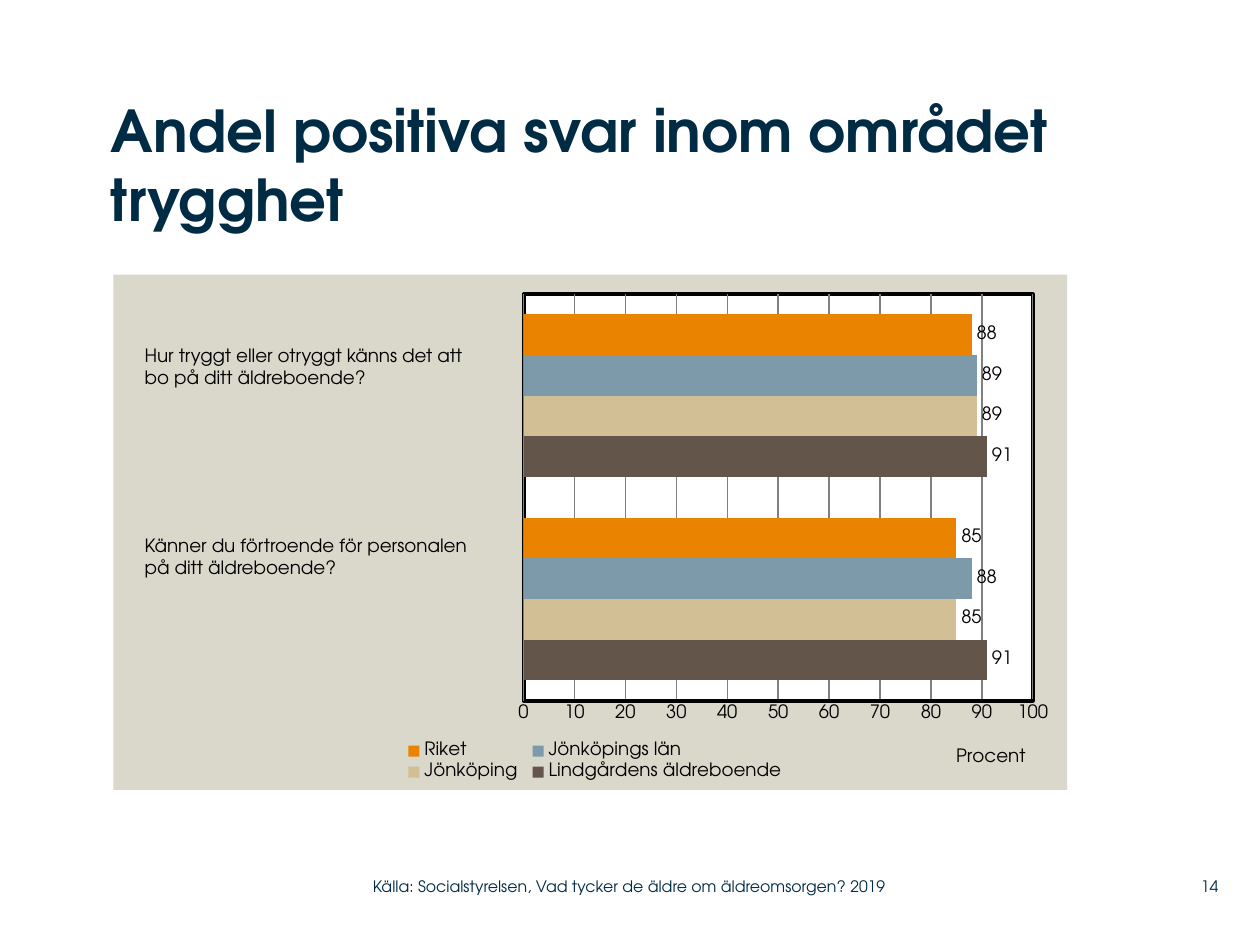
from dataclasses import dataclass

from lxml.etree import SubElement
from pptx import Presentation
from pptx.chart.data import CategoryChartData
from pptx.dml.color import RGBColor
from pptx.enum.chart import (XL_CHART_TYPE as ChartType, XL_LABEL_POSITION as LabelPosition,
                             XL_LEGEND_POSITION as LegendPosition, XL_TICK_MARK as TickMark)
from pptx.enum.text import MSO_ANCHOR as Anchor, PP_ALIGN as Align
from pptx.oxml import parse_xml
from pptx.oxml.ns import nsdecls, qn
from pptx.util import Inches, Pt


@dataclass(frozen=True)
class Theme:
    font: str = "TeX Gyre Adventor"
    navy: str = "002B45"
    black: str = "000000"
    white: str = "FFFFFF"
    panel: str = "DAD7CB"
    grid: str = "808080"
    title_size: float = 33
    body_size: float = 10.5
    footer_size: float = 9
    frame_width: float = 2.25


THEME = Theme()
COLUMNS, ROWS = 100, 75
WIDTH, HEIGHT = Inches(10), Inches(7.5)

# Name, colour, values (lower question first)
SERIES = [
    ("Lindgårdens äldreboende", "635549", (91, 91)),
    ("Jönköping", "D3BF96", (85, 89)),
    ("Jönköpings län", "7D9AAA", (88, 89)),
    ("Riket", "E98300", (85, 88)),
]


def place(column, row, columns, rows):
    """Turn grid units into left, top, width and height."""
    across, down = WIDTH / COLUMNS, HEIGHT / ROWS
    return (int(column * across), int(row * down), int(columns * across), int(rows * down))


def style_font(font, size, color, bold=False):
    font.name, font.size, font.bold = THEME.font, Pt(size), bold
    font.color.rgb = RGBColor.from_string(color)


def add_text(page, area, lines, size, color, bold=False, inset=0.0,
             align=Align.LEFT, anchor=Anchor.TOP):
    frame = page.shapes.add_textbox(*place(*area)).text_frame
    frame.word_wrap = True
    frame.vertical_anchor = anchor
    frame.margin_left = frame.margin_right = Inches(inset)
    frame.margin_top = frame.margin_bottom = Inches(inset / 2)
    frame.text = "\n".join(lines)
    for para in frame.paragraphs:
        para.alignment = align
        style_font(para.font, size, color, bold)


def set_layout(element, index, **shares):
    """Fix a chart part's position, in shares of the chart's size."""
    for old in element.findall(qn("c:layout")):
        element.remove(old)
    layout = parse_xml(f"<c:layout {nsdecls('c')}/>")
    element.insert(index, layout)
    manual = SubElement(layout, qn("c:manualLayout"))
    if element.tag == qn("c:plotArea"):
        SubElement(manual, qn("c:layoutTarget"), val="inner")
    for mode in ("xMode", "yMode"):
        SubElement(manual, qn(f"c:{mode}"), val="edge")
    for name, share in shares.items():
        SubElement(manual, qn(f"c:{name}"), val=str(share))


def area_format(fill, line=None):
    outline = "<a:ln><a:noFill/></a:ln>"
    if line:
        outline = (f'<a:ln w="{Pt(THEME.frame_width)}"><a:solidFill>'
                   f'<a:srgbClr val="{line}"/></a:solidFill></a:ln>')
    return parse_xml(f'<c:spPr {nsdecls("c", "a")}><a:solidFill><a:srgbClr val="{fill}"/>'
                     f"</a:solidFill>{outline}</c:spPr>")


def style_axes(chart):
    chart.category_axis.visible = False
    axis = chart.value_axis
    axis.minimum_scale, axis.maximum_scale, axis.major_unit = 0, 100, 10
    axis.major_tick_mark = axis.minor_tick_mark = TickMark.NONE
    axis.format.line.color.rgb = RGBColor.from_string(THEME.black)
    axis.format.line.width = Pt(THEME.frame_width)
    axis.has_major_gridlines = True
    grid_line = axis.major_gridlines.format.line
    grid_line.color.rgb = RGBColor.from_string(THEME.grid)
    grid_line.width = Pt(0.75)
    style_font(axis.tick_labels.font, THEME.body_size, THEME.black)
    title = axis.axis_title
    title.text_frame.text = "Procent"
    style_font(title.text_frame.paragraphs[0].font, THEME.body_size, THEME.black)
    set_layout(title._element, 1, x=0.88, y=0.91)


def style_series(plot):
    plot.gap_width, plot.overlap, plot.vary_by_categories = 100, 0, False
    for series, (_, color, _) in zip(plot.series, SERIES):
        series.format.fill.solid()
        series.format.fill.fore_color.rgb = RGBColor.from_string(color)
        labels = series.data_labels
        labels.show_value = True
        labels.position = LabelPosition.OUTSIDE_END
        style_font(labels.font, THEME.body_size, THEME.black)


def style_legend(chart):
    chart.has_legend = True
    legend = chart.legend
    legend.position = LegendPosition.BOTTOM
    legend.include_in_layout = False
    style_font(legend.font, THEME.body_size, THEME.black)
    set_layout(legend._element, 1, x=0.3, y=0.9, w=0.41, h=0.09)


def add_answer_chart(page, area):
    data = CategoryChartData()
    data.categories = ["1", "2"]
    for name, _, values in SERIES:
        data.add_series(name, values)
    chart = page.shapes.add_chart(ChartType.BAR_CLUSTERED, *place(*area), data).chart
    chart.has_title = False
    style_font(chart.font, THEME.body_size, THEME.black)
    style_axes(chart)
    style_series(chart.plots[0])
    style_legend(chart)

    chart_part = chart._chartSpace.find(qn("c:chart"))
    plot_area = chart_part.find(qn("c:plotArea"))
    set_layout(plot_area, 0, x=0.43, y=0.038, w=0.534, h=0.789)
    plot_area.append(area_format(THEME.white, THEME.black))
    chart_part.addnext(area_format(THEME.panel))


def add_question(page, row, lines):
    add_text(page, (10.5, row, 29.4, 4.5), lines, THEME.body_size, THEME.black, inset=0.1)


def add_footer(page, column, columns, text, align=Align.LEFT):
    add_text(page, (column, 68.9, columns, 2.9), [text], THEME.footer_size, THEME.navy,
             align=align, anchor=Anchor.MIDDLE)


def main():
    deck = Presentation()
    deck.slide_width, deck.slide_height = WIDTH, HEIGHT
    page = deck.slides.add_slide(deck.slide_layouts[6])
    add_answer_chart(page, (9, 21.8, 75.7, 40.9))
    add_text(page, (8.8, 7.5, 76, 14.2), ["Andel positiva svar inom området trygghet"],
             THEME.title_size, THEME.navy, bold=True)
    add_question(page, 26.8, ["Hur tryggt eller otryggt känns det att bo på ditt äldreboende?"])
    add_question(page, 41.9, ["Känner du förtroende för personalen", "på ditt äldreboende?"])
    add_footer(page, 92, 4.7, "14", Align.RIGHT)
    add_footer(page, 29.6, 44.3,
               "Källa: Socialstyrelsen, Vad tycker de äldre om äldreomsorgen? 2019")
    deck.save("out.pptx")


if __name__ == "__main__":
    main()
